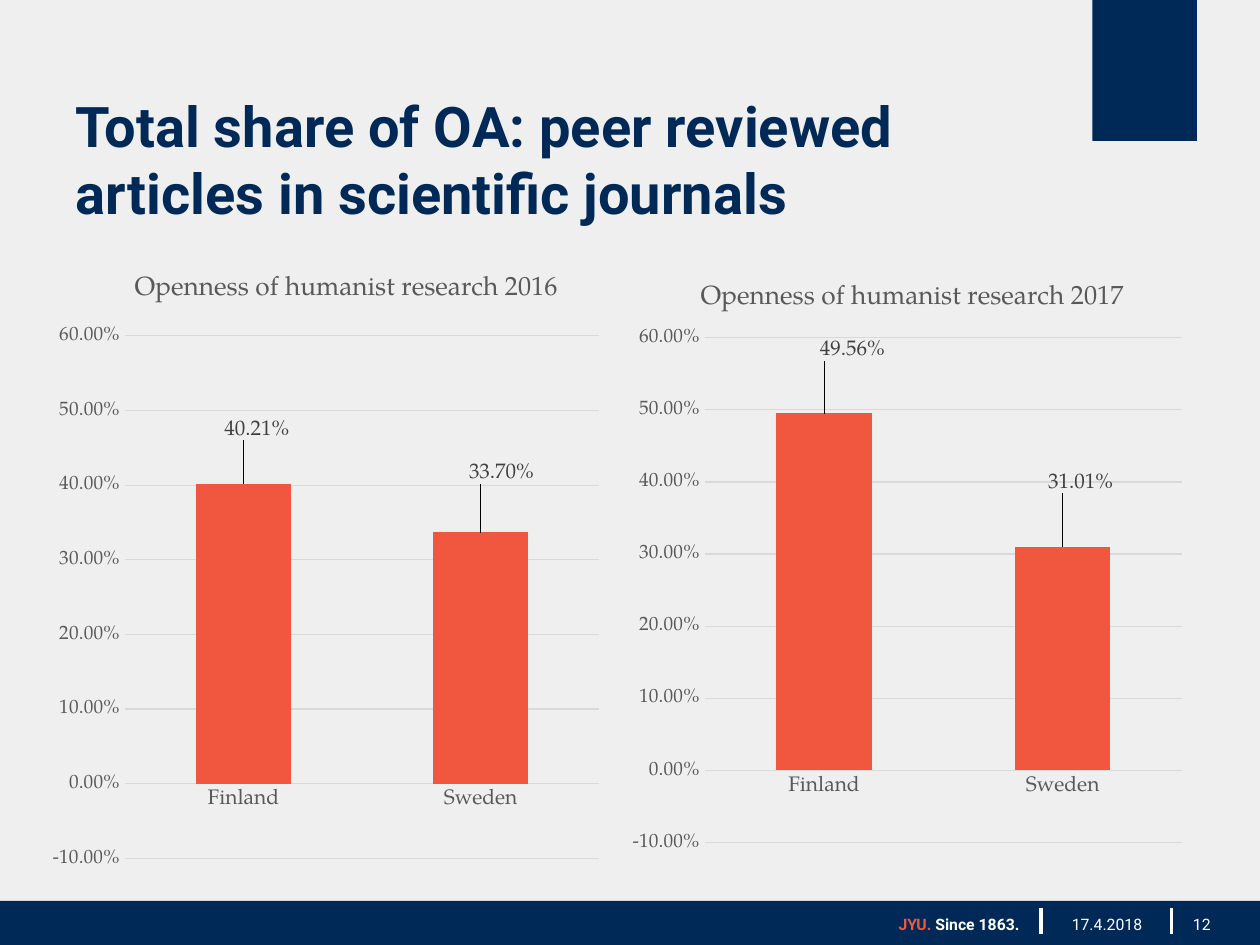
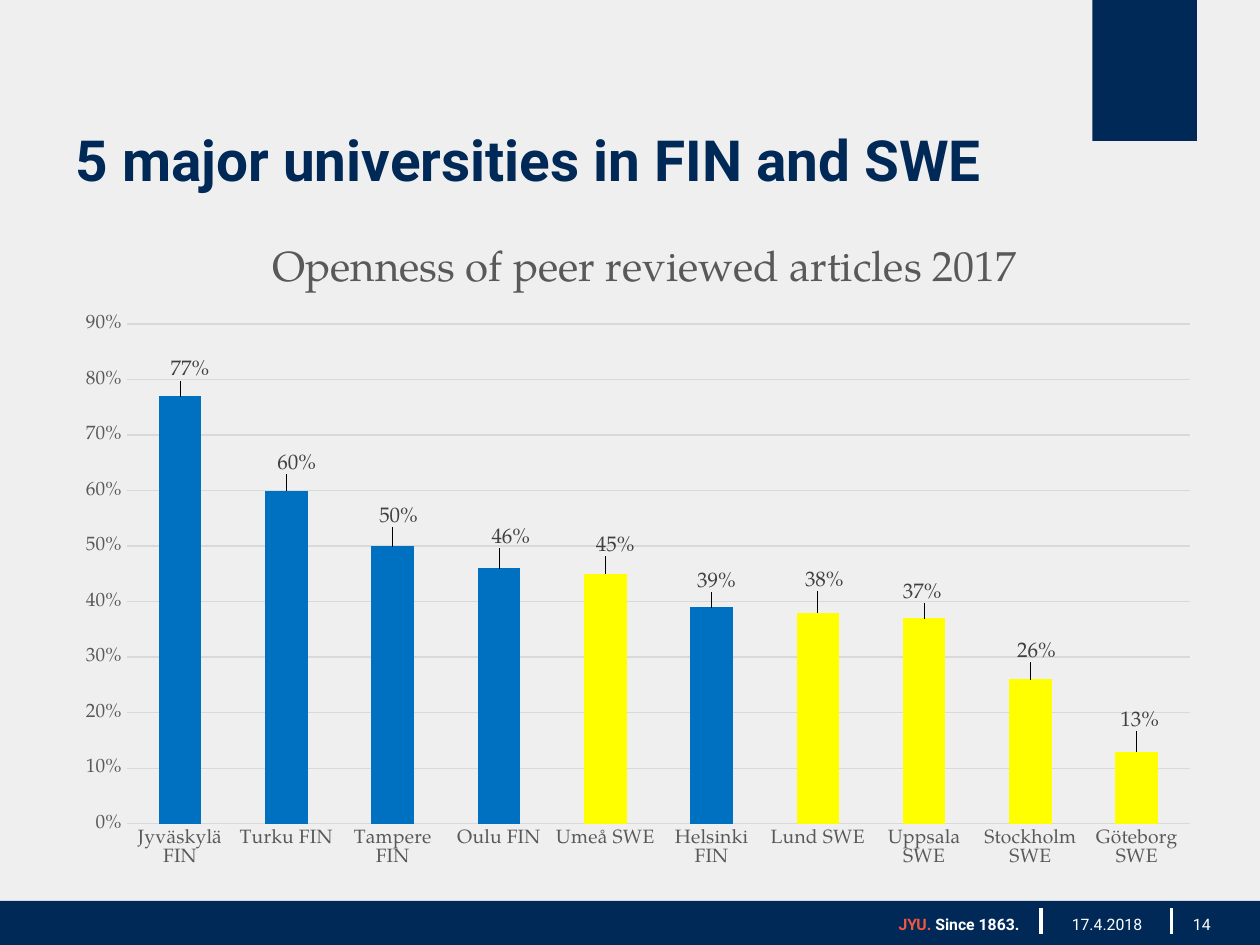
from dataclasses import dataclass
from typing import Any, NamedTuple, Optional

import pptx
import pptx.chart.data
import pptx.dml.color
import pptx.enum.chart
import pptx.enum.shapes
import pptx.enum.text
import pptx.oxml
import pptx.oxml.ns
import pptx.util
from pptx.util import Cm

NAVY = "002957"
ORANGE = "F1563F"
WHITE = "FFFFFF"
BACKGROUND = "EEEFEE"
AXIS_GREY = "595959"
LABEL_GREY = "404040"
GRID_GREY = "D9D9D9"
COUNTRY_COLOURS = {"FIN": "0070C0", "SWE": "FFFF00"}
SANS = "Roboto"
SERIF = "TeX Gyre Pagella"
FOOTER_TOP = 18.31
FOOTER_HEIGHT = 0.51
ALIGN = pptx.enum.text.PP_ALIGN


class Box(NamedTuple):
    left: float
    top: float
    width: float
    height: float

    def lengths(self) -> list:
        return [Cm(value) for value in self]


class Run(NamedTuple):
    text: str
    colour: str = WHITE
    bold: bool = False


class Bar(NamedTuple):
    category: str
    value: float
    label_right: float
    label_down: float


@dataclass
class ColumnChart:
    title: str
    title_left: float
    title_top: float
    title_size: float
    frame: Box
    plot: Box
    bars: list[Bar]
    number_format: str
    minimum: float
    maximum: float
    category_size: float


@dataclass
class FooterText:
    box: Box
    alignment: Any
    runs: list[Run]


@dataclass
class ChartSlide:
    title: str
    title_size: float
    number: int
    charts: list[ColumnChart]


BANDS = [Box(22.02, 0, 2.11, 2.84), Box(0, 18.16, 25.4, 0.89)]
DIVIDERS = [23.62, 20.98]
TITLE_BOX = Box(1.27, 1.78, 20.47, 2.84)

SLIDES = [
    ChartSlide(
        "Total share of OA: peer reviewed articles in scientific journals", 32, 12,
        [
            ColumnChart(
                "Openness of humanist research 2016", 2.62, 5.4, 15,
                Box(0.84, 5.13, 11.48, 12.65), Box(2.52, 6.77, 9.56, 10.54),
                [Bar("Finland", 0.4021, 0.27, -0.77), Bar("Sweden", 0.337, 0.42, -0.87)],
                "0.00%", -0.1, 0.6, 12,
            ),
            ColumnChart(
                "Openness of humanist research 2017", 14.03, 5.58, 15,
                Box(12.52, 5.13, 11.53, 12.32), Box(14.21, 6.81, 9.62, 10.18),
                [Bar("Finland", 0.4956, 0.57, -0.95), Bar("Sweden", 0.3101, 0.36, -0.97)],
                "0.00%", -0.1, 0.6, 12,
            ),
        ],
    ),
    ChartSlide(
        "5 major universities in FIN and SWE", 32.4, 14,
        [
            ColumnChart(
                "Openness of peer reviewed articles 2017", 5.34, 4.82, 24,
                Box(1.27, 4.32, 23.19, 13.46), Box(2.56, 6.53, 21.43, 10.08),
                [
                    Bar("Jyväskylä FIN", 0.77, 0.2, -0.2),
                    Bar("Turku FIN", 0.6, 0.21, -0.22),
                    Bar("Tampere FIN", 0.5, 0.12, -0.28),
                    Bar("Oulu FIN", 0.46, 0.24, -0.3),
                    Bar("Umeå SWE", 0.45, 0.2, -0.24),
                    Bar("Helsinki FIN", 0.39, 0.1, -0.2),
                    Bar("Lund SWE", 0.38, 0.13, -0.32),
                    Bar("Uppsala SWE", 0.37, -0.04, -0.2),
                    Bar("Stockholm SWE", 0.26, 0.12, -0.24),
                    Bar("Göteborg SWE", 0.13, 0.06, -0.3),
                ],
                "0%", 0, 0.9, 11,
            ),
        ],
    ),
]


def rgb(colour: str) -> pptx.dml.color.RGBColor:
    return pptx.dml.color.RGBColor.from_string(colour)


def set_attributes(target: Any, values: dict) -> None:
    for name, value in values.items():
        setattr(target, name, value)


def format_font(font: Any, name: str, size: float, colour: str, bold: bool = False) -> None:
    set_attributes(font, {"name": name, "size": pptx.util.Pt(size), "bold": bold})
    font.color.rgb = rgb(colour)


def fill_solid(fill: Any, colour: str) -> None:
    fill.solid()
    fill.fore_color.rgb = rgb(colour)


def draw_band(slide: Any, box: Box) -> None:
    shape = slide.shapes.add_shape(pptx.enum.shapes.MSO_SHAPE.RECTANGLE, *box.lengths())
    shape.shadow.inherit = False
    fill_solid(shape.fill, NAVY)
    shape.line.fill.background()


def draw_divider(slide: Any, left: float) -> None:
    connector = slide.shapes.add_connector(
        pptx.enum.shapes.MSO_CONNECTOR.STRAIGHT,
        Cm(left), Cm(FOOTER_TOP), Cm(left), Cm(FOOTER_TOP + FOOTER_HEIGHT),
    )
    connector.line.width = pptx.util.Pt(2)
    connector.line.color.rgb = rgb(WHITE)
    effects = pptx.oxml.parse_xml(f"<a:effectLst {pptx.oxml.ns.nsdecls('a')}/>")
    connector.element.spPr.append(effects)


def draw_footer_text(slide: Any, footer: FooterText) -> None:
    frame = slide.shapes.add_textbox(*footer.box.lengths()).text_frame
    frame.word_wrap = True
    paragraph = frame.paragraphs[0]
    paragraph.alignment = footer.alignment
    for item in footer.runs:
        run = paragraph.add_run()
        run.text = item.text
        format_font(run.font, SANS, 9, item.colour, item.bold)


def draw_shared_parts(slide: Any, number: int) -> None:
    fill_solid(slide.background.fill, BACKGROUND)
    for band in BANDS:
        draw_band(slide, band)
    for left in DIVIDERS:
        draw_divider(slide, left)
    footers = [
        FooterText(Box(14.83, FOOTER_TOP, 5.97, FOOTER_HEIGHT), ALIGN.RIGHT,
                   [Run("JYU. ", ORANGE, True), Run("Since 1863.", WHITE, True)]),
        FooterText(Box(21.16, FOOTER_TOP, 2.31, FOOTER_HEIGHT), ALIGN.CENTER, [Run("17.4.2018")]),
        FooterText(Box(23.8, FOOTER_TOP, 1.27, FOOTER_HEIGHT), ALIGN.LEFT, [Run(str(number))]),
    ]
    for footer in footers:
        draw_footer_text(slide, footer)


def format_title(slide: Any, text: str, size: float) -> None:
    title = slide.shapes.title
    names = ("left", "top", "width", "height")
    set_attributes(title, dict(zip(names, TITLE_BOX.lengths())))
    frame = title.text_frame
    frame.text = text
    set_attributes(frame, {
        "word_wrap": True,
        "auto_size": pptx.enum.text.MSO_AUTO_SIZE.NONE,
        "vertical_anchor": pptx.enum.text.MSO_ANCHOR.MIDDLE,
    })
    paragraph = frame.paragraphs[0]
    paragraph.alignment = ALIGN.LEFT
    format_font(paragraph.runs[0].font, SANS, size, NAVY, True)


def set_layout(parent: Any, index: int, values: dict) -> None:
    for layout in parent.findall(pptx.oxml.ns.qn("c:layout")):
        parent.remove(layout)
    settings = "".join(f'<c:{name} val="{value}"/>' for name, value in values.items())
    parent.insert(index, pptx.oxml.parse_xml(
        f"<c:layout {pptx.oxml.ns.nsdecls('c')}><c:manualLayout>{settings}"
        "</c:manualLayout></c:layout>"
    ))


def place_chart_parts(chart: Any, content: ColumnChart) -> None:
    frame, plot = content.frame, content.plot
    edges = {"xMode": "edge", "yMode": "edge"}
    root = chart.element
    set_layout(next(root.iter(pptx.oxml.ns.qn("c:title"))), 1, {
        **edges,
        "x": (content.title_left - frame.left) / frame.width,
        "y": (content.title_top - frame.top) / frame.height,
    })
    set_layout(next(root.iter(pptx.oxml.ns.qn("c:plotArea"))), 0, {
        "layoutTarget": "inner",
        **edges,
        "x": (plot.left - frame.left) / frame.width,
        "y": (plot.top - frame.top) / frame.height,
        "w": plot.width / frame.width,
        "h": plot.height / frame.height,
    })
    for bar, label in zip(content.bars, root.iter(pptx.oxml.ns.qn("c:dLbl"))):
        set_layout(label, 1, {
            "x": bar.label_right / frame.width,
            "y": bar.label_down / frame.height,
        })
        label.insert(2, pptx.oxml.parse_xml(
            f"<c:numFmt {pptx.oxml.ns.nsdecls('c')} "
            f'formatCode="{content.number_format}" sourceLinked="0"/>'
        ))


def format_axis(axis: Any, size: float) -> None:
    no_tick = pptx.enum.chart.XL_TICK_MARK.NONE
    set_attributes(axis, {"major_tick_mark": no_tick, "minor_tick_mark": no_tick})
    axis.format.line.fill.background()
    format_font(axis.tick_labels.font, SERIF, size, AXIS_GREY)


def format_series(series: Any, content: ColumnChart) -> None:
    series.invert_if_negative = False
    fill_solid(series.format.fill, ORANGE)
    set_attributes(series.data_labels, {
        "show_value": True,
        "number_format": content.number_format,
        "number_format_is_linked": False,
    })
    format_font(series.data_labels.font, SERIF, 12, LABEL_GREY)
    for index, bar in enumerate(content.bars):
        point = series.points[index]
        colour: Optional[str] = COUNTRY_COLOURS.get(bar.category.split()[-1])
        if colour:
            fill_solid(point.format.fill, colour)
        format_font(point.data_label.font, SERIF, 12, LABEL_GREY)
        point.data_label.position = pptx.enum.chart.XL_LABEL_POSITION.OUTSIDE_END


def draw_chart(slide: Any, content: ColumnChart) -> None:
    data = pptx.chart.data.CategoryChartData(number_format=content.number_format)
    data.categories = [bar.category for bar in content.bars]
    data.add_series("Series 1", [bar.value for bar in content.bars])
    chart = slide.shapes.add_chart(
        pptx.enum.chart.XL_CHART_TYPE.COLUMN_CLUSTERED, *content.frame.lengths(), data
    ).chart
    format_font(chart.font, SERIF, 10, "000000")
    chart.has_legend = False
    title_frame = chart.chart_title.text_frame
    title_frame.text = content.title
    format_font(title_frame.paragraphs[0].runs[0].font, SERIF, content.title_size, AXIS_GREY)
    format_axis(chart.category_axis, content.category_size)
    format_axis(chart.value_axis, 11)
    set_attributes(chart.value_axis, {
        "minimum_scale": content.minimum,
        "maximum_scale": content.maximum,
        "major_unit": 0.1,
        "has_major_gridlines": True,
    })
    set_attributes(chart.value_axis.tick_labels, {
        "number_format": content.number_format, "number_format_is_linked": False,
    })
    grid = chart.value_axis.major_gridlines.format.line
    grid.width = pptx.util.Pt(0.75)
    grid.color.rgb = rgb(GRID_GREY)
    set_attributes(chart.plots[0], {"gap_width": 150, "vary_by_categories": False})
    format_series(chart.plots[0].series[0], content)
    place_chart_parts(chart, content)


def main() -> None:
    presentation = pptx.Presentation()
    set_attributes(presentation, {"slide_width": Cm(25.4), "slide_height": Cm(19.05)})
    for content in SLIDES:
        slide = presentation.slides.add_slide(presentation.slide_layouts[5])
        draw_shared_parts(slide, content.number)
        format_title(slide, content.title, content.title_size)
        for chart in content.charts:
            draw_chart(slide, chart)
    presentation.save("out.pptx")


if __name__ == "__main__":
    main()
